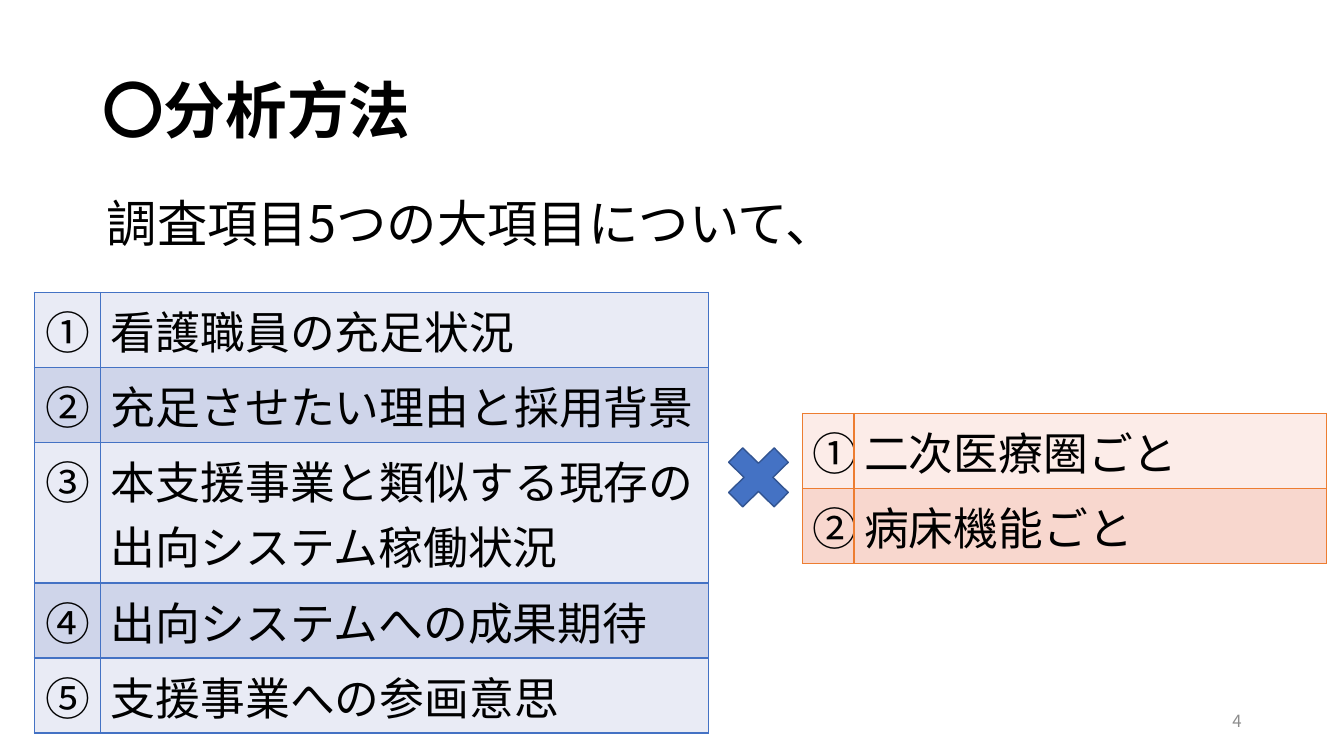
from lxml.etree import SubElement
from pptx import Presentation
from pptx.dml.color import RGBColor
from pptx.enum.shapes import MSO_SHAPE as SHAPE
from pptx.enum.text import MSO_ANCHOR as ANCHOR, PP_ALIGN as ALIGN
from pptx.oxml.ns import qn
from pptx.util import Cm, Pt

BLACK = RGBColor(0x00, 0x00, 0x00)
GRAY = RGBColor(0x8C, 0x8C, 0x8C)
BLUE = RGBColor(0x44, 0x72, 0xC4)
DARK_BLUE = RGBColor(0x32, 0x54, 0x91)
ORANGE = RGBColor(0xED, 0x7D, 0x31)
BLUE_BANDS = (RGBColor(0xE9, 0xEB, 0xF5), RGBColor(0xCF, 0xD5, 0xEA))
ORANGE_BANDS = (RGBColor(0xFC, 0xEC, 0xE8), RGBColor(0xF8, 0xD7, 0xCE))

ROW, TALL_ROW = 1.89, 3.54
SURVEY_ITEMS = [
    ("①", "看護職員の充足状況", ROW),
    ("②", "充足させたい理由と採用背景", ROW),
    ("③", "本支援事業と類似する現存の出向システム稼働状況", TALL_ROW),
    ("④", "出向システムへの成果期待", ROW),
    ("⑤", "支援事業への参画意思", ROW),
]
GROUPINGS = [("①", "二次医療圏ごと", ROW), ("②", "病床機能ごと", ROW)]


def write(tf, text, size, font, color=BLACK, bold=False, align=ALIGN.LEFT,
          spacing=None, before=None):
    p = tf.paragraphs[0]
    p.alignment = align
    if spacing:
        p.line_spacing = spacing
    if before:
        p.space_before = Pt(before)
    r = p.add_run()
    r.text = text
    r.font.size = Pt(size)
    r.font.bold = bold
    r.font.name = font
    r.font.color.rgb = color
    # Japanese glyphs take the East Asian typeface
    SubElement(r.font._element, qn("a:ea"), typeface=font)


def set_borders(cell, color, width=1):
    tc_pr = cell._tc.get_or_add_tcPr()
    for i, side in enumerate(("lnL", "lnR", "lnT", "lnB")):
        ln = tc_pr.makeelement(qn(f"a:{side}"), {"w": str(Pt(width))})
        fill = SubElement(ln, qn("a:solidFill"))
        SubElement(fill, qn("a:srgbClr"), val=str(color))
        tc_pr.insert(i, ln)


class SlideBuilder:
    font = "Noto Sans CJK JP"

    def __init__(self, slide):
        self.shapes = slide.shapes

    def text(self, text, left, top, width, height, size,
             anchor=ANCHOR.TOP, **fmt):
        s = self.shapes.add_textbox(Cm(left), Cm(top), Cm(width), Cm(height))
        tf = s.text_frame
        tf.word_wrap = True
        tf.vertical_anchor = anchor
        write(tf, text, size, self.font, **fmt)
        return s

    def numbered_table(self, items, left, top, widths, line, bands, size=32):
        """Draw (number, label, row height) items with alternating row fills."""
        height = sum(h for _, _, h in items)
        frame = self.shapes.add_table(len(items), len(widths), Cm(left),
                                      Cm(top), Cm(sum(widths)), Cm(height))
        table = frame.table
        table.first_row = False
        for col, width in zip(table.columns, widths):
            col.width = Cm(width)
        for i, (number, label, row_height) in enumerate(items):
            table.rows[i].height = Cm(row_height)
            for j, (text, align) in enumerate(((number, ALIGN.CENTER),
                                               (label, ALIGN.LEFT))):
                cell = table.cell(i, j)
                cell.fill.solid()
                cell.fill.fore_color.rgb = bands[i % 2]
                set_borders(cell, line)
                write(cell.text_frame, text, size, self.font, align=align)

    def shape(self, kind, left, top, width, height, fill, line):
        s = self.shapes.add_shape(kind, Cm(left), Cm(top), Cm(width), Cm(height))
        s.shadow.inherit = False
        s.fill.solid()
        s.fill.fore_color.rgb = fill
        s.line.color.rgb = line
        s.line.width = Pt(1)


def main():
    prs = Presentation()
    prs.slide_width, prs.slide_height = Cm(33.87), Cm(19.05)
    b = SlideBuilder(prs.slides.add_slide(prs.slide_layouts[6]))

    lead = b.text("調査項目5つの大項目について、", 1.17, 4.9, 32.7, 14.15, 36,
                  spacing=0.9, before=5)
    lead.text_frame.margin_left = Cm(1.52)
    b.text("〇分析方法", 2.33, 1.01, 29.21, 3.68, 44, anchor=ANCHOR.MIDDLE,
           bold=True, spacing=0.9)
    b.numbered_table(SURVEY_ITEMS, 0.86, 7.37, (1.68, 15.32), BLUE, BLUE_BANDS)
    b.numbered_table(GROUPINGS, 20.22, 10.42, (1.3, 11.91), ORANGE, ORANGE_BANDS)
    b.shape(SHAPE.MATH_MULTIPLY, 18.01, 10.95, 2.21, 2.16, BLUE, DARK_BLUE)
    b.text("4", 23.92, 17.66, 7.62, 1.01, 12, anchor=ANCHOR.MIDDLE,
           color=GRAY, align=ALIGN.RIGHT)

    prs.save("out.pptx")


if __name__ == "__main__":
    main()
